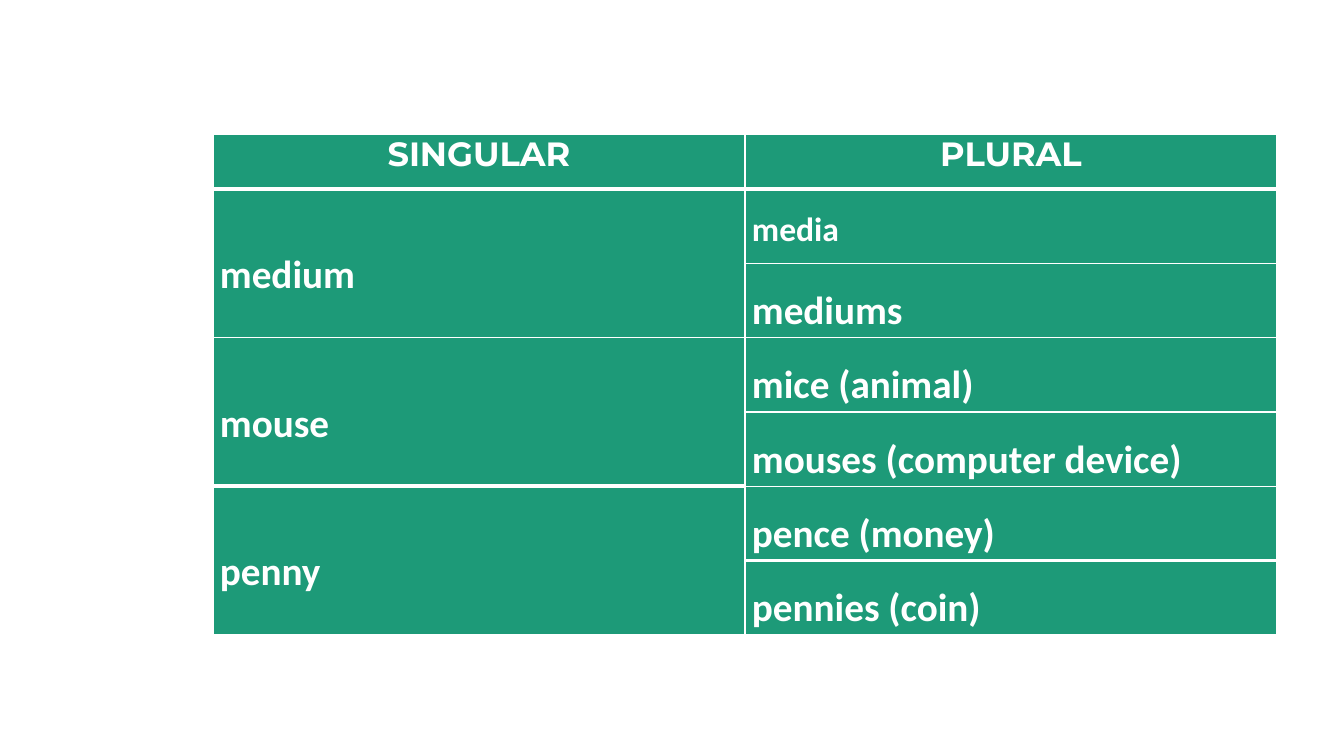
from lxml import etree
from pptx import Presentation
from pptx.dml.color import RGBColor
from pptx.enum.text import MSO_ANCHOR as ANCHOR, PP_ALIGN as ALIGN
from pptx.oxml.ns import qn
from pptx.util import Emu, Pt

GREEN, WHITE = "1D9A78", "FFFFFF"
HEADERS = ["SINGULAR", "PLURAL"]
NOUNS = [
    ("medium", [("media", 24), ("mediums", 28)]),
    ("mouse", [("mice (animal)", 28), ("mouses (computer device)", 28)]),
    ("penny", [("pence (money)", 28), ("pennies (coin)", 28)]),
]
HEAVY_BELOW = {(0, 0), (0, 1), (4, 0), (5, 1)}


def px(n):
    """Turn slide pixels into EMU."""
    return Emu(round(n * 914400 / 100.8))


def color(value):
    """Turn a hex string into a colour."""
    return RGBColor.from_string(value)


def add_border(cell, side, width):
    """Draw a white line on one side of a cell."""
    ln = etree.SubElement(cell._tc.get_or_add_tcPr(), qn(f"a:ln{side}"), w=str(Pt(width)))
    fill = etree.SubElement(ln, qn("a:solidFill"))
    etree.SubElement(fill, qn("a:srgbClr"), val=WHITE)


def style_cell(cell, row, col):
    """Give a cell its borders, green fill and margins."""
    add_border(cell, "L", 1)
    add_border(cell, "R", 1)
    add_border(cell, "T", 3 if (row - 1, col) in HEAVY_BELOW else 1)
    add_border(cell, "B", 3 if (row, col) in HEAVY_BELOW else 1)
    cell.fill.solid()
    cell.fill.fore_color.rgb = color(GREEN)
    cell.margin_left = cell.margin_right = px(7)
    cell.margin_top = cell.margin_bottom = 0


def write(cell, text, size, font="Calibri", align=ALIGN.LEFT, spacing=1.5, anchor=ANCHOR.TOP):
    """Write bold white text in a cell."""
    cell.vertical_anchor = anchor
    p = cell.text_frame.paragraphs[0]
    p.alignment = align
    p.line_spacing = spacing
    r = p.add_run()
    r.text = text
    r.font.name = font
    r.font.size = Pt(size)
    r.font.bold = True
    r.font.color.rgb = color(WHITE)


def add_noun_table(slide):
    """Add the table of singular and plural nouns."""
    count = 1 + sum(len(plurals) for _, plurals in NOUNS)
    table = slide.shapes.add_table(count, 2, px(213), px(134), px(1064), px(501)).table
    for col in table.columns:
        col.width = px(532)
    for i, row in enumerate(table.rows):
        row.height = px(446) // (count - 1) if i else px(55)
        for j, cell in enumerate(row.cells):
            style_cell(cell, i, j)
    for j, text in enumerate(HEADERS):
        write(table.cell(0, j), text, 24, "Montserrat", ALIGN.CENTER, 1.0)
    top = 1
    for singular, plurals in NOUNS:
        noun = table.cell(top, 0)
        noun.merge(table.cell(top + len(plurals) - 1, 0))
        write(noun, singular, 28, anchor=ANCHOR.MIDDLE)
        for i, (plural, size) in enumerate(plurals, top):
            write(table.cell(i, 1), plural, size)
        top += len(plurals)


def main():
    """Build the slide and save it."""
    prs = Presentation()
    prs.slide_width, prs.slide_height = px(1344), px(756)
    slide = prs.slides.add_slide(prs.slide_layouts[6])
    add_noun_table(slide)
    prs.save("out.pptx")


if __name__ == "__main__":
    main()
